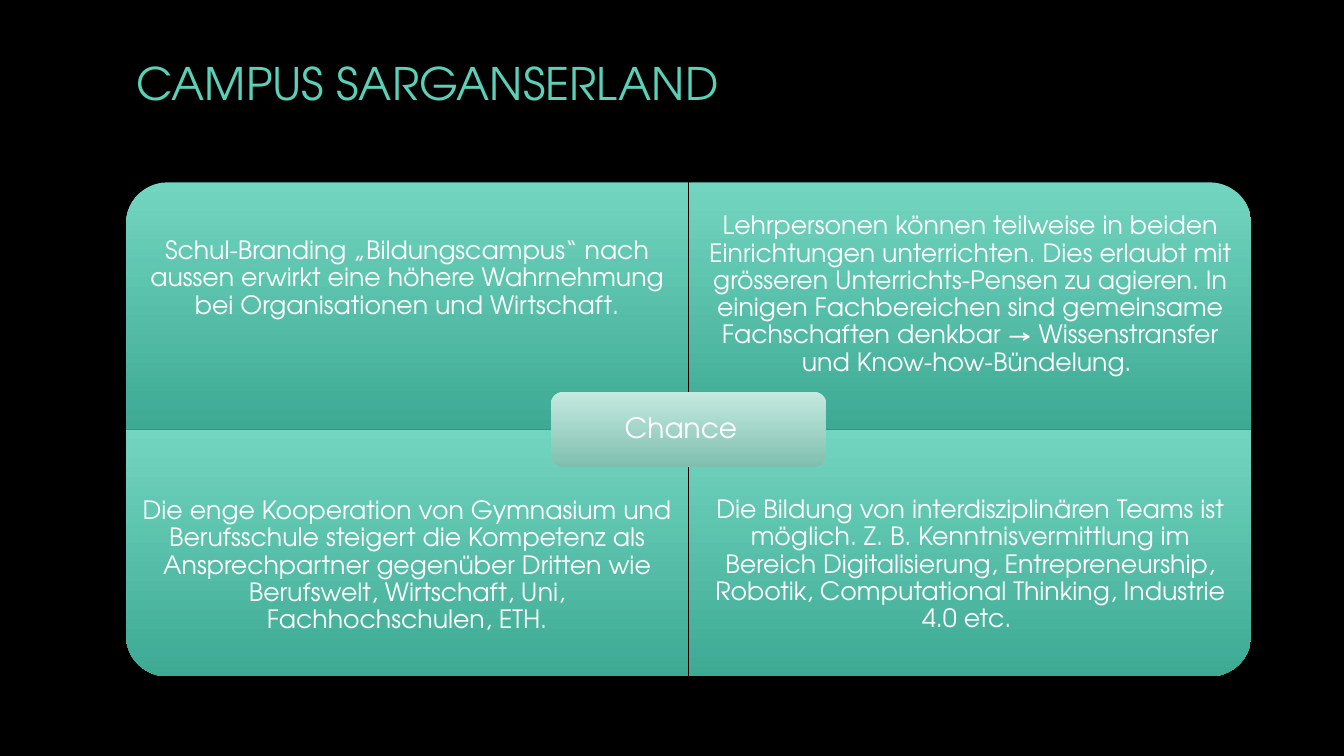
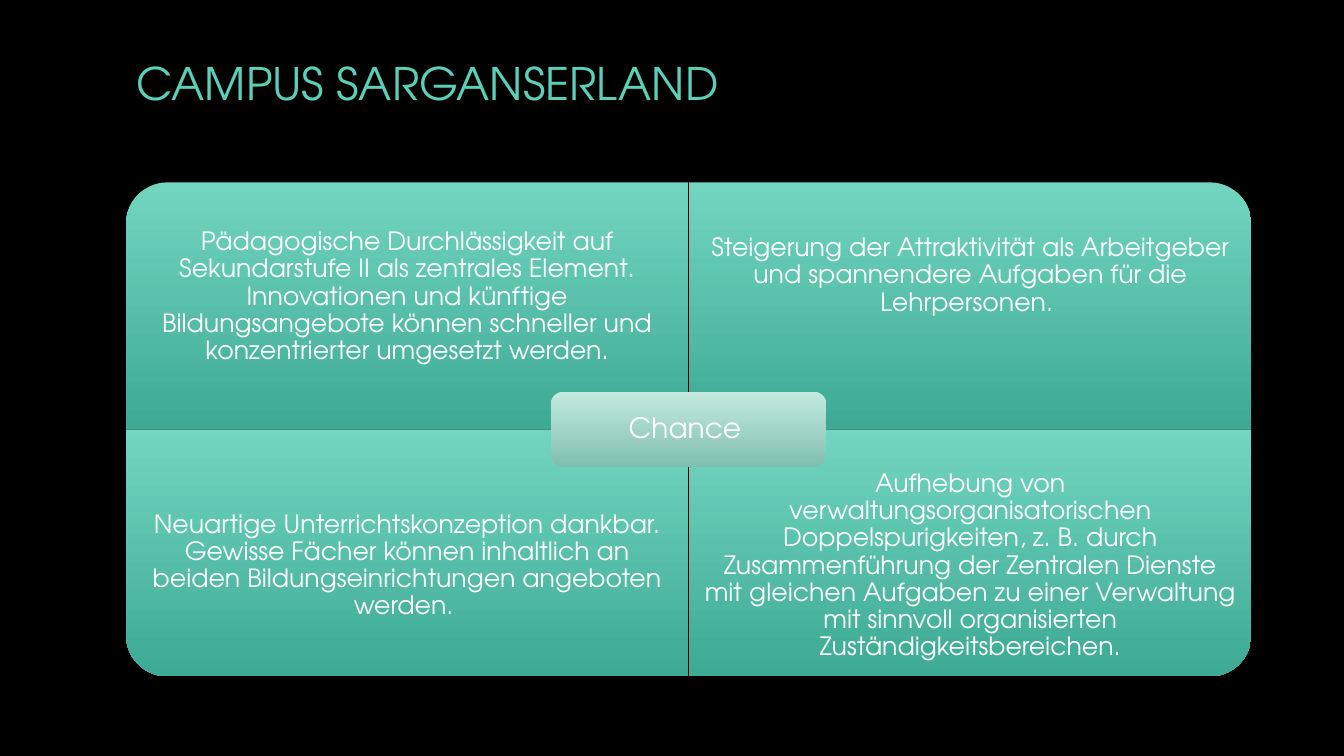
"""Build two slides on the chances of a shared campus."""
import dataclasses
import math

import pptx
import pptx.dml.color
import pptx.enum.shapes
import pptx.enum.text
import pptx.util

Inch = pptx.util.Inches
Align = pptx.enum.text.PP_ALIGN
Anchor = pptx.enum.text.MSO_ANCHOR


@dataclasses.dataclass(frozen=True)
class Theme:
    """Hold the colours, type sizes and grid."""
    font: str = "TeX Gyre Adventor"
    back: str = "000000"
    head: str = "5AD0B8"
    text: str = "FFFFFF"
    cell: tuple = ("72D5C0", "3EAA94")
    hub: tuple = ("C5EAE0", "7FBFAF")
    big: int = 32
    mid: int = 20
    small: int = 18
    left: float = 1.25
    top: float = 1.81
    wide: float = 5.58
    high: float = 2.45
    gap: float = 0.01
    curve: float = 0.41
    pad: float = 0.14


def tint(code):
    """Turn a hex code into a colour."""
    return pptx.dml.color.RGBColor.from_string(code)


def write(shape, words, *, font, size, hue, align=Align.CENTER, pads=None, line=None):
    """Set the text of a shape and its format."""
    frame = shape.text_frame
    frame.word_wrap = True
    frame.vertical_anchor = Anchor.MIDDLE
    if pads:
        (frame.margin_left, frame.margin_top,
         frame.margin_right, frame.margin_bottom) = map(Inch, pads)
    frame.text = words
    para = frame.paragraphs[0]
    para.alignment = align
    if line:
        para.line_spacing = line
    style = para.runs[0].font
    style.name, style.size = font, pptx.util.Pt(size)
    style.color.rgb = tint(hue)


def paint(shape, hues):
    """Fill a shape from top to bottom, with no line or shadow."""
    shape.shadow.inherit = False
    shape.line.fill.background()
    shape.fill.gradient()
    shape.fill.gradient_angle = 270
    for stop, hue in zip(shape.fill.gradient_stops, hues):
        stop.color.rgb = tint(hue)


def trace(box, round_at, curve, steps=24):
    """List the outline of a box with one round corner."""
    left, top, wide, high = box
    points = []
    for turn, (col, row) in enumerate([(0, 0), (1, 0), (1, 1), (0, 1)]):
        x, y = left + col * wide, top + row * high
        if (col, row) != round_at:
            points.append((x, y))
            continue
        mid_x = x + curve * (1 - 2 * col)
        mid_y = y + curve * (1 - 2 * row)
        for step in range(steps + 1):
            angle = math.radians(180 + 90 * (turn + step / steps))
            points.append((mid_x + curve * math.cos(angle),
                           mid_y + curve * math.sin(angle)))
    return [(Inch(x), Inch(y)) for x, y in points]


class Deck:
    """Hold the style and the current slide."""

    def __init__(self, theme):
        """Open a wide deck with a plain ground."""
        self.theme = theme
        self.show = pptx.Presentation()
        self.show.slide_width = Inch(13.33)
        self.show.slide_height = Inch(7.5)
        fill = self.show.slide_master.background.fill
        fill.solid()
        fill.fore_color.rgb = tint(theme.back)
        self.slide = None

    def page(self, words):
        """Start a slide with its title."""
        look = self.theme
        self.slide = self.show.slides.add_slide(self.show.slide_layouts[5])
        title = self.slide.shapes.title
        title.left, title.top = Inch(look.left), Inch(0.36)
        title.width, title.height = Inch(10.83), Inch(0.91)
        write(title, words, font=look.font, size=look.big, hue=look.head,
              align=Align.LEFT)

    def cell(self, col, row, words, shift):
        """Add a quarter, its text moved down by the shift."""
        look = self.theme
        box = (look.left + col * (look.wide + look.gap / 2),
               look.top + row * look.high,
               look.wide - look.gap / 2, look.high)
        first, *rest = trace(box, (col, row), look.curve)
        path = self.slide.shapes.build_freeform(*first)
        path.add_line_segments(rest, close=True)
        shape = path.convert_to_shape()
        paint(shape, look.cell)
        pads = (look.pad, look.pad + max(0, 2 * shift),
                look.pad, look.pad + max(0, -2 * shift))
        write(shape, words, font=look.font, size=look.small, hue=look.text,
              pads=pads, line=0.9)

    def hub(self, words, inset, wide=2.73, high=0.75):
        """Add the label where the quarters meet."""
        look = self.theme
        shape = self.slide.shapes.add_shape(
            pptx.enum.shapes.MSO_SHAPE.ROUNDED_RECTANGLE,
            Inch(look.left + look.wide - wide / 2),
            Inch(look.top + look.high - high / 2), Inch(wide), Inch(high))
        paint(shape, look.hub)
        write(shape, words, font=look.font, size=look.mid, hue=look.text,
              pads=(0.1, 0.1, 0.1 + inset, 0.1), line=0.9)

    def save(self):
        """Write the deck to disk."""
        self.show.save("out.pptx")


PAGES = [
    (0.15, [
        ("Schul-Branding „Bildungscampus“ nach aussen erwirkt eine höhere "
         "Wahrnehmung bei Organisationen und Wirtschaft.", -0.27),
        ("Lehrpersonen können teilweise in beiden Einrichtungen unterrichten. "
         "Dies erlaubt mit grösseren Unterrichts-Pensen zu agieren. In einigen "
         "Fachbereichen sind gemeinsame Fachschaften denkbar → Wissenstransfer "
         "und Know-how-Bündelung. ", -0.11),
        ("Die enge Kooperation von Gymnasium und Berufsschule steigert die "
         "Kompetenz als Ansprechpartner gegenüber Dritten wie Berufswelt, "
         "Wirtschaft, Uni, Fachhochschulen, ETH.", 0.13),
        ("Die Bildung von interdisziplinären Teams ist möglich. Z. B. "
         "Kenntnisvermittlung im Bereich Digitalisierung, Entrepreneurship, "
         "Robotik, Computational Thinking, Industrie 4.0 etc. ", 0.12),
    ]),
    (0.07, [
        ("Pädagogische Durchlässigkeit auf Sekundarstufe II als zentrales "
         "Element. Innovationen und künftige Bildungsangebote können schneller "
         "und konzentrierter umgesetzt werden.", -0.09),
        ("Steigerung der Attraktivität als Arbeitgeber und spannendere "
         "Aufgaben für die Lehrpersonen. ", -0.3),
        ("Neuartige Unterrichtskonzeption dankbar. Gewisse Fächer können "
         "inhaltlich an beiden Bildungseinrichtungen angeboten werden. ", 0.13),
        ("Aufhebung von verwaltungsorganisatorischen Doppelspurigkeiten, "
         "z. B. durch Zusammenführung der Zentralen Dienste mit gleichen "
         "Aufgaben zu einer Verwaltung mit sinnvoll organisierten "
         "Zuständigkeitsbereichen.", 0.13),
    ]),
]


def main():
    """Build and save the slides."""
    deck = Deck(Theme())
    for inset, cells in PAGES:
        deck.page("CAMPUS SARGANSERLAND")
        for spot, (words, shift) in enumerate(cells):
            row, col = divmod(spot, 2)
            deck.cell(col, row, words, shift)
        deck.hub("Chance", inset)
    deck.save()


if __name__ == "__main__":
    main()
